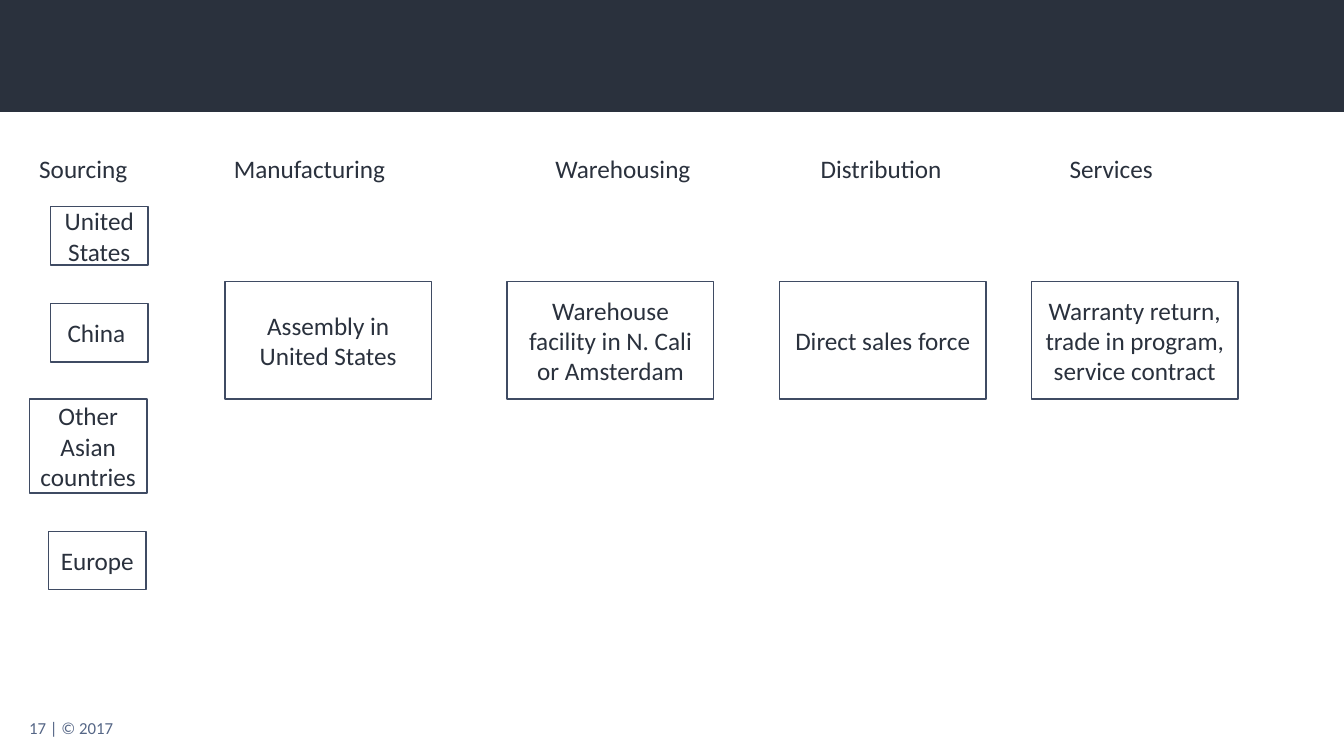
from typing import NamedTuple

from pptx import Presentation
from pptx import util as u
from pptx.dml.color import RGBColor
from pptx.enum import shapes, text

PX = 9144  # EMU per px, 100 px to the inch
COLORS = {"dark": "2A313D", "line": "3F4B63", "footer": "556686", "white": "FFFFFF"}
FONT = "Calibri"
HEADING_TOP, HEADING_H = 147, 40
STAGE_TOP, STAGE_W, STAGE_H = 279, 205, 117


class Box(NamedTuple):
    label: str
    x: int
    y: int
    w: int
    h: int


def stage(label: str, x: int) -> Box:
    return Box(label, x, STAGE_TOP, STAGE_W, STAGE_H)


def heading(label: str, x: int, w: int) -> Box:
    return Box(label, x, HEADING_TOP, w, HEADING_H)


HEADINGS = [
    heading("Sourcing", 29, 109),
    heading("Manufacturing", 222, 172),
    heading("Warehousing", 541, 156),
    heading("Distribution", 804, 142),
    heading("Services", 1051, 104),
]
SOURCES = [
    Box("United States", 50, 205, 97, 58),
    Box("China ", 50, 301, 97, 58),
    Box("Other Asian countries", 29, 396, 117, 93),
    Box("Europe ", 48, 527, 97, 58),
]
STAGES = [
    stage("Assembly in United States", 223),
    stage("Warehouse facility in N. Cali or Amsterdam", 503),
    stage("Direct sales force", 773),
    stage("Warranty return, trade in program, service contract", 1023),
]
TITLE_BAND = Box("", 0, 0, 1333, 111)
FOOTER = Box("17 | © 2017", 19, 707, 394, 24)


def rgb(name: str) -> RGBColor:
    return RGBColor.from_string(COLORS[name])


def emu(box: Box) -> list[int]:
    return [v * PX for v in box[1:]]


def write(sp, label: str, size: int, color: str, frame: dict, align=None) -> None:
    tf = sp.text_frame
    for name, value in frame.items():
        setattr(tf, name, value)
    p = tf.paragraphs[0]
    p.alignment = align
    r = p.add_run()
    r.text = label
    for name, value in {"name": FONT, "size": u.Pt(size)}.items():
        setattr(r.font, name, value)
    r.font.color.rgb = rgb(color)


def add_rect(s, box: Box, fill: str, line: str | None = None):
    sp = s.shapes.add_shape(shapes.MSO_SHAPE.RECTANGLE, *emu(box))
    sp.shadow.inherit = False
    sp.fill.solid()
    sp.fill.fore_color.rgb = rgb(fill)
    if line:
        sp.line.color.rgb = rgb(line)
        sp.line.width = u.Pt(1)
    else:
        sp.line.fill.background()
    return sp


def add_label(s, box: Box, size: int, color: str, frame: dict) -> None:
    write(s.shapes.add_textbox(*emu(box)), box.label, size, color, frame)


def main() -> None:
    prs = Presentation()
    prs.slide_width, prs.slide_height = 1333 * PX, 750 * PX
    s = prs.slides.add_slide(prs.slide_layouts[6])

    add_label(s, FOOTER, 12, "footer", {"word_wrap": True})
    add_rect(s, TITLE_BAND, "dark")
    for box in HEADINGS:
        add_label(s, box, 18, "dark", {
            "word_wrap": False,
            "auto_size": text.MSO_AUTO_SIZE.SHAPE_TO_FIT_TEXT,
        })
    for box in SOURCES + STAGES:
        sp = add_rect(s, box, "white", "line")
        write(sp, box.label, 18, "dark", {
            "word_wrap": True,
            "vertical_anchor": text.MSO_ANCHOR.MIDDLE,
        }, text.PP_ALIGN.CENTER)

    prs.save("out.pptx")


if __name__ == "__main__":
    main()
